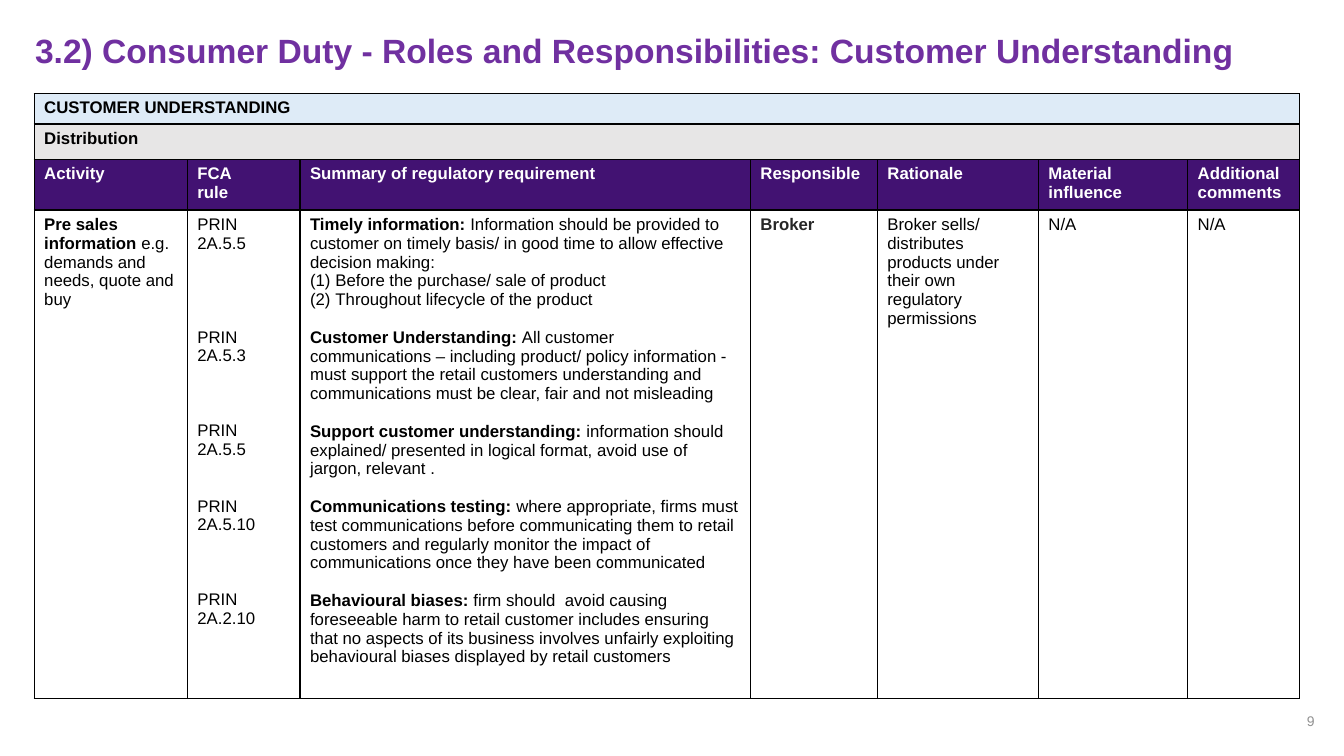
from lxml.etree import SubElement as Sub
from pptx import Presentation
from pptx.dml.color import RGBColor as Rgb
from pptx.enum.text import MSO_ANCHOR as Anchor, PP_ALIGN as Align
from pptx.oxml.ns import qn
from pptx.util import Cm, Pt

HUES = {
    "title": "7030A0", "head": "421272", "blue": "DEEBF7", "grey": "E7E6E6",
    "white": "FFFFFF", "black": "000000", "dark": "262626", "page": "929292",
}
LINE = 13.4  # height of one text line in points


class Deck:
    def __init__(self, font, wide, high):
        self.font = font
        self.prs = Presentation()
        self.prs.slide_width, self.prs.slide_height = Cm(wide), Cm(high)
        self.slide = self.prs.slides.add_slide(self.prs.slide_layouts[6])

    def run(self, para, text, size, hue, bold):
        run = para.add_run()
        run.text = text
        style = {"name": self.font, "size": Pt(size), "bold": bold}
        for key, val in style.items():
            setattr(run.font, key, val)
        run.font.color.rgb = Rgb.from_string(HUES[hue])

    def text(self, box, text, size, hue, bold=False, **form):
        frame = self.slide.shapes.add_textbox(*map(Cm, box)).text_frame
        style = {
            "word_wrap": True, "vertical_anchor": Anchor.MIDDLE,
            "margin_left": Cm(0.3), "margin_right": Cm(0.3),
            "margin_top": Cm(0.15), "margin_bottom": Cm(0.15),
        }
        for key, val in style.items():
            setattr(frame, key, val)
        para = frame.paragraphs[0]
        for key, val in form.items():
            setattr(para, key, val)
        self.run(para, text, size, hue, bold)

    def number(self, para):
        props = para._p.get_or_add_pPr()
        props.set("marL", str(Cm(0.64)))
        props.set("indent", str(-Cm(0.64)))
        Sub(props, qn("a:buFont"), typeface="+mj-lt")
        Sub(props, qn("a:buAutoNum"), type="arabicParenBoth")

    def edge(self, cell):
        props = cell._tc.get_or_add_tcPr()
        for side in ("lnL", "lnR", "lnT", "lnB"):
            line = Sub(props, qn("a:" + side), w=str(Pt(1)))
            fill = Sub(line, qn("a:solidFill"))
            Sub(fill, qn("a:srgbClr"), val=HUES["black"])

    def cell(self, cell, paras, fill, hue="black"):
        """Each paragraph: blank lines above, bold part, plain part, numbered."""
        self.edge(cell)
        cell.fill.solid()
        cell.fill.fore_color.rgb = Rgb.from_string(HUES[fill])
        for i, (gap, strong, plain, listed) in enumerate(paras):
            frame = cell.text_frame
            para = frame.add_paragraph() if i else frame.paragraphs[0]
            para.space_before = Pt(gap * LINE)
            if listed:
                self.number(para)
            for part, bold in ((strong, True), (plain, False)):
                if part:
                    self.run(para, part, 12, hue, bold)

    def table(self, left, top, cols, rows):
        frame = self.slide.shapes.add_table(
            len(rows), len(cols), Cm(left), Cm(top), Cm(sum(cols)), Cm(sum(rows)))
        table = frame.table
        for key in ("first_row", "horz_banding"):
            setattr(table, key, False)
        for col, wide in zip(table.columns, cols):
            col.width = Cm(wide)
        for row, high in zip(table.rows, rows):
            row.height = Cm(high)
        return table


def strong(*lines):
    return [(0, line, "", False) for line in lines]


def plain(text, gap=0, listed=False):
    return (gap, "", text, listed)


HEADS = [
    ["Activity"], ["FCA", "rule"], ["Summary of regulatory requirement"],
    ["Responsible"], ["Rationale"], ["Material influence"], ["Additional comments"],
]
RULES = [("2A.5.5", 0), ("2A.5.3", 4), ("2A.5.5", 3), ("2A.5.10", 2), ("2A.2.10", 3)]
NEEDS = [
    (0, "Timely information: ", "Information should be provided to customer on timely "
     "basis/ in good time to allow effective decision making:", False),
    plain("Before the purchase/ sale of product", listed=True),
    plain("Throughout lifecycle of the product", listed=True),
    (1, "Customer Understanding: ", "All customer communications – including product/ "
     "policy information - must support the retail customers understanding and "
     "communications must be clear, fair and not misleading", False),
    (1, "Support customer understanding: ", "information should explained/ presented in "
     "logical format, avoid use of jargon, relevant .", False),
    (1, "Communications testing: ", "where appropriate, firms must test communications "
     "before communicating them to retail customers and regularly monitor the impact of "
     "communications once they have been communicated", False),
    (1, "Behavioural biases:", " firm should  avoid causing foreseeable harm to retail "
     "customer includes ensuring that no aspects of its business involves unfairly "
     "exploiting behavioural biases displayed by retail customers", False),
]
BODY = [
    [(0, "Pre sales information ", "e.g. demands and needs, quote and buy", False)],
    [plain("PRIN " + rule, gap) for rule, gap in RULES],
    NEEDS,
    strong("Broker"),
    [plain("Broker sells/ distributes products under their own regulatory permissions")],
    [plain("N/A")],
    [plain("N/A")],
]


def main():
    deck = Deck("Arial", 33.87, 19.05)

    # Title and page number
    deck.text((-0.74, 0.71, 33.45, 1.22),
              "3.2) Consumer Duty - Roles and Responsibilities: Customer Understanding",
              24, "title", True, alignment=Align.CENTER, line_spacing=0.9)
    deck.text((25.53, 17.65, 7.9, 1.02), "9", 10, "page", alignment=Align.RIGHT)

    # Table grid
    cols = [3.86, 2.84, 11.35, 3.2, 4.06, 3.76, 2.82]
    grid = deck.table(0.86, 2.36, cols, [0.72, 0.9, 1.2, 11.6])

    # Full-width bands
    bands = [("CUSTOMER UNDERSTANDING", "blue"), ("Distribution", "grey")]
    for row, (label, fill) in enumerate(bands):
        grid.cell(row, 0).merge(grid.cell(row, len(cols) - 1))
        for col in range(len(cols)):
            deck.cell(grid.cell(row, col), [] if col else strong(label), fill)

    # Column heads and body
    for col, (head, body) in enumerate(zip(HEADS, BODY)):
        deck.cell(grid.cell(2, col), strong(*head), "head", "white")
        hue = "dark" if head == ["Responsible"] else "black"
        deck.cell(grid.cell(3, col), body, "white", hue)

    deck.prs.save("out.pptx")


if __name__ == "__main__":
    main()
